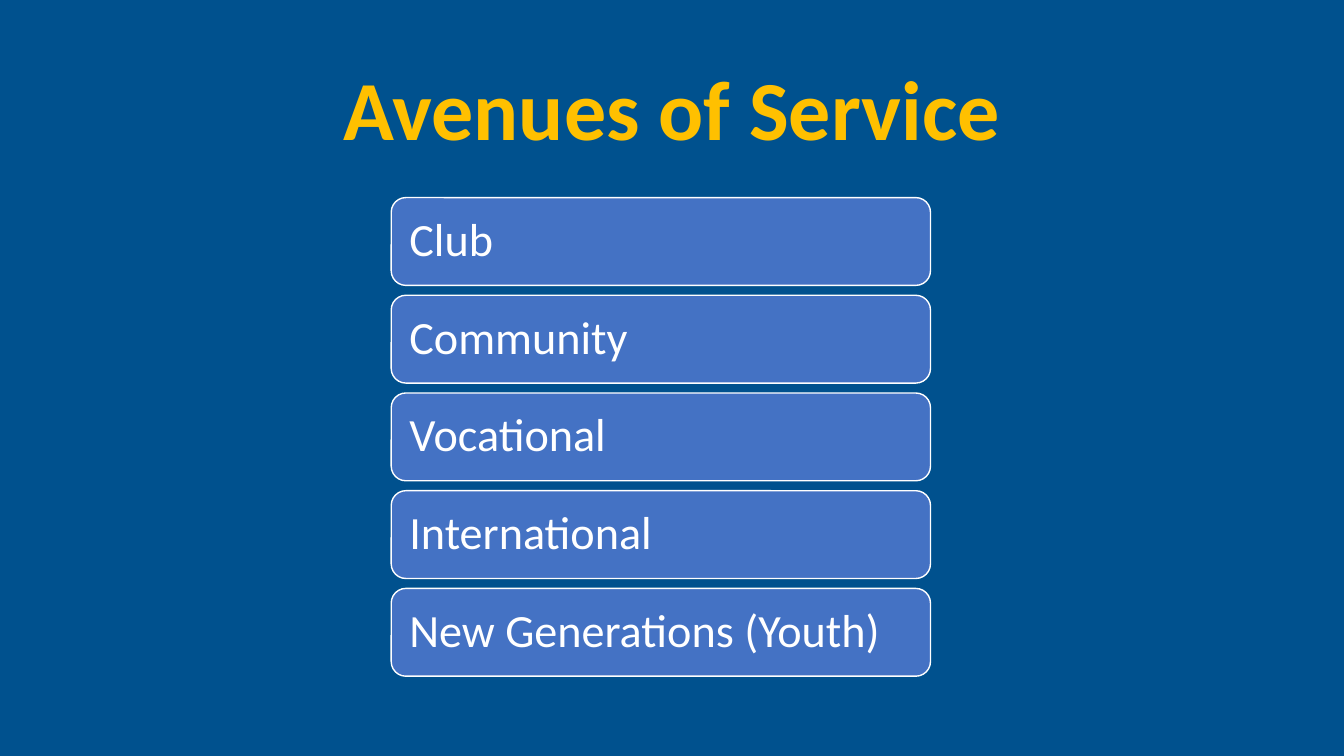
from pptx import Presentation, util as u
from pptx.dml import color
from pptx.enum import shapes, text

AVENUES = ["Club", "Community", "Vocational", "International", "New Generations (Youth)"]


def rgb(code):
    """Turn a hex string into a colour."""
    return color.RGBColor.from_string(code)


def write(shape, words, size, code, align, bold=False):
    """Put one line of text, vertically centred, into a shape."""
    frame = shape.text_frame
    frame.word_wrap = True
    frame.vertical_anchor = text.MSO_ANCHOR.MIDDLE
    para = frame.paragraphs[0]
    para.alignment = align
    para.line_spacing = 0.9
    span = para.add_run()
    span.text = words
    span.font.name = "Calibri"
    span.font.size = u.Pt(size)
    span.font.bold = bold
    span.font.color.rgb = rgb(code)


def add_title(page, left, top, width, height):
    """Place the slide heading in the given box."""
    box = page.shapes.add_textbox(u.Cm(left), u.Cm(top), u.Cm(width), u.Cm(height))
    write(box, "Avenues of Service", 60, "FFC000", text.PP_ALIGN.CENTER, bold=True)


def add_avenues(page, left, top, width, height, gap=0.25):
    """Stack one rounded bar per avenue evenly inside the given box."""
    bar_height = (height - gap * (len(AVENUES) - 1)) / len(AVENUES)
    for row, avenue in enumerate(AVENUES):
        bar = page.shapes.add_shape(
            shapes.MSO_SHAPE.ROUNDED_RECTANGLE,
            u.Cm(left), u.Cm(top + row * (bar_height + gap)),
            u.Cm(width), u.Cm(bar_height))
        bar.shadow.inherit = False
        bar.fill.solid()
        bar.fill.fore_color.rgb = rgb("4472C4")
        bar.line.color.rgb = rgb("FFFFFF")
        bar.line.width = u.Pt(1)
        frame = bar.text_frame
        frame.margin_left = frame.margin_right = u.Cm(0.35)
        frame.margin_top = frame.margin_bottom = u.Cm(0.35)
        write(bar, avenue, 33, "FFFFFF", text.PP_ALIGN.LEFT)


def main():
    """Build and save the deck."""
    deck = Presentation()
    deck.slide_width, deck.slide_height = u.Cm(33.87), u.Cm(19.05)
    page = deck.slides.add_slide(deck.slide_layouts[6])
    page.background.fill.solid()
    page.background.fill.fore_color.rgb = rgb("00518E")
    add_title(page, 2.33, 1.02, 29.21, 3.68)
    add_avenues(page, 9.86, 4.98, 13.59, 12.06)
    deck.save("out.pptx")


if __name__ == "__main__":
    main()
